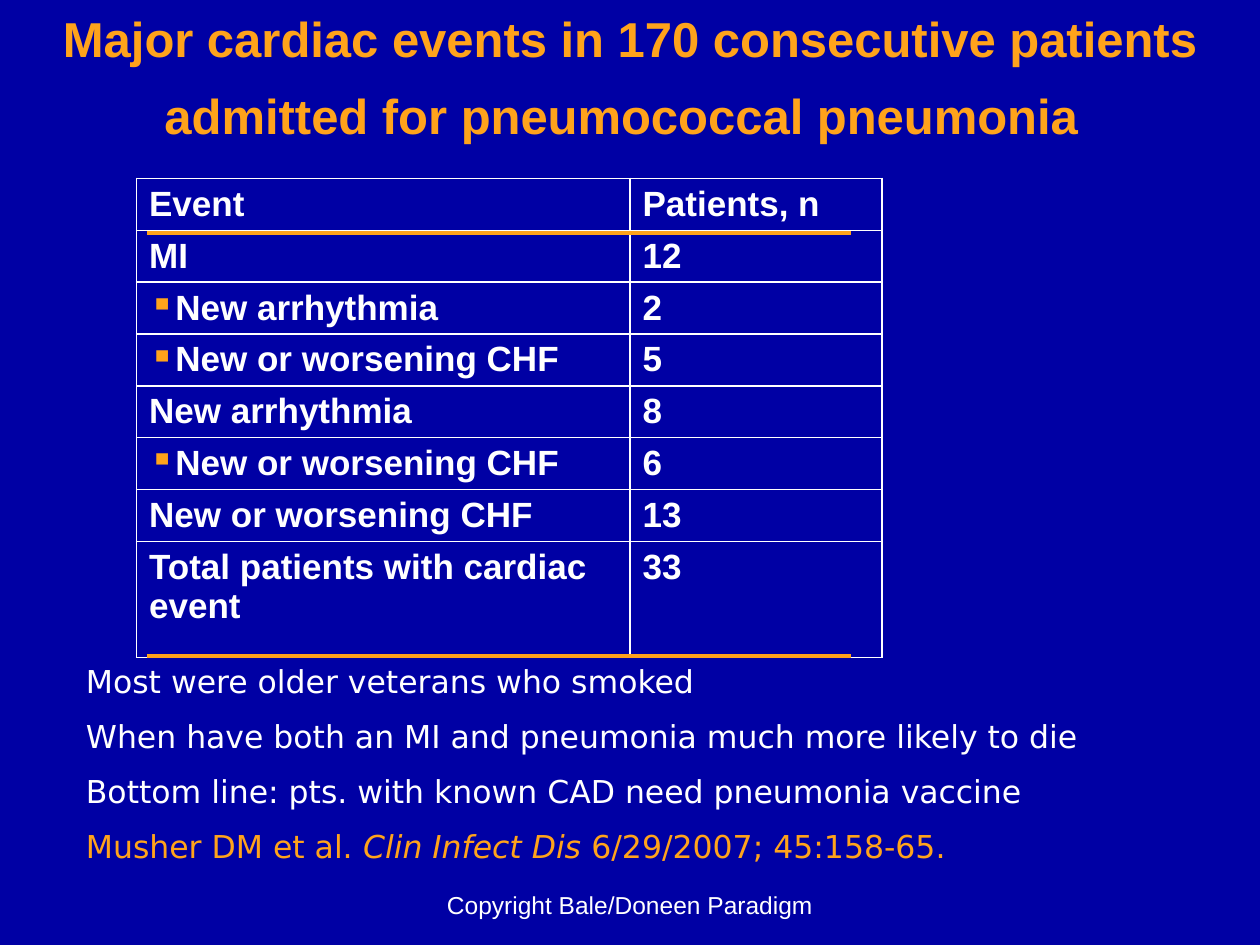
import pptx
import pptx.dml.color
import pptx.enum.shapes
import pptx.enum.text
import pptx.oxml.ns
import pptx.util
import lxml.etree

Pt = pptx.util.Pt
ALIGN = pptx.enum.text.PP_ALIGN
ANCHOR = pptx.enum.text.MSO_ANCHOR
COLORS = {"back": "0000A4", "text": "FFFFFF", "gold": "FFA31B"}

EVENTS = [
    ("Event", "Patients, n"),
    ("MI", "12"),
    ("▪New arrhythmia", "2"),
    ("▪New or worsening CHF", "5"),
    ("New arrhythmia", "8"),
    ("▪New or worsening CHF", "6"),
    ("New or worsening CHF", "13"),
    ("Total patients with cardiac event", "33"),
]
NOTES = [
    "Most were older veterans who smoked",
    "When have both an MI and pneumonia much more likely to die",
    "Bottom line: pts. with known CAD need pneumonia vaccine",
]


def color(name):
    return pptx.dml.color.RGBColor.from_string(COLORS[name])


def child(parent, tag, **attrs):
    return lxml.etree.SubElement(parent, pptx.oxml.ns.qn(tag), attrs)


class Deck:
    def __init__(self, slide):
        self.slide = slide
        fill = slide.background.fill
        fill.solid()
        fill.fore_color.rgb = color("back")

    def run(self, para, text, size, font="Arial", tint="text", bold=False, slant=False):
        run = para.add_run()
        run.text = text
        run.font.size = Pt(size)
        run.font.name = font
        run.font.bold = bold
        run.font.italic = slant
        run.font.color.rgb = color(tint)

    def box(self, left, top, width, height, anchor=ANCHOR.TOP):
        shape = self.slide.shapes.add_textbox(Pt(left), Pt(top), Pt(width), Pt(height))
        frame = shape.text_frame
        frame.word_wrap = True
        frame.vertical_anchor = anchor
        return frame

    def bullet(self, para, sign):
        """Put a gold bullet right before the text, with no indent."""
        props = para._p.get_or_add_pPr()
        props.set("marL", "0")
        props.set("indent", "0")
        child(child(props, "a:buClr"), "a:srgbClr", val=COLORS["gold"])
        child(props, "a:buChar", char=sign)

    def table(self, rows, left, top, widths, heights):
        frame = self.slide.shapes.add_table(
            len(rows), len(widths), Pt(left), Pt(top), Pt(sum(widths)), Pt(sum(heights)))
        table = frame.table
        table.first_row = table.horz_banding = False
        for col, width in zip(table.columns, widths):
            col.width = Pt(width)
        for row, height, texts in zip(table.rows, heights, rows):
            row.height = Pt(height)
            for cell, text in zip(row.cells, texts):
                cell.fill.background()
                cell.margin_top = Pt(3.6)
                cell.margin_bottom = Pt(2)
                para = cell.text_frame.paragraphs[0]
                if text.startswith("▪"):
                    self.bullet(para, "▪")
                self.run(para, text.lstrip("▪"), 20, bold=True)

    def rule(self, left, right, top):
        line = self.slide.shapes.add_connector(
            pptx.enum.shapes.MSO_CONNECTOR.STRAIGHT, Pt(left), Pt(top), Pt(right), Pt(top))
        line.line.color.rgb = color("gold")
        line.line.width = Pt(2.25)
        child(line._element.spPr, "a:effectLst")

    def title(self, text):
        para = self.box(0, 1.5, 720, 84, ANCHOR.MIDDLE).paragraphs[0]
        para.alignment = ALIGN.CENTER
        para.line_spacing = 1.05
        self.run(para, text, 28, tint="gold", bold=True)
        self.run(para, " ", 36, tint="gold", bold=True)

    def notes(self, texts, source):
        """Write the remarks, then the source as (text, slant) runs in gold."""
        frame = self.box(42, 375, 630, 127)
        lines = [[(text, "text", False)] for text in texts]
        lines.append([(text, "gold", slant) for text, slant in source])
        for i, line in enumerate(lines):
            para = frame.add_paragraph() if i else frame.paragraphs[0]
            if i:
                para.space_before = Pt(9.7)
            for text, tint, slant in line:
                self.run(para, text, 18, "DejaVu Sans", tint, slant=slant)

    def footer(self, text):
        para = self.box(246, 492, 228, 37, ANCHOR.BOTTOM).paragraphs[0]
        para.alignment = ALIGN.CENTER
        self.run(para, text, 14)


def main():
    show = pptx.Presentation()
    show.slide_width, show.slide_height = Pt(720), Pt(540)
    deck = Deck(show.slides.add_slide(show.slide_layouts[6]))
    deck.footer("Copyright Bale/Doneen Paradigm")
    deck.notes(NOTES, [("Musher DM et al. ", False), ("Clin Infect Dis", True),
                       (" 6/29/2007; 45:158-65.", False)])
    deck.title("Major cardiac events in 170 consecutive patients "
               "admitted for pneumococcal pneumonia")
    deck.table(EVENTS, 78, 102, [282, 144], [29.5] * 7 + [66.5])
    for top in (133, 375):
        deck.rule(84, 486, top)
    show.save("out.pptx")


if __name__ == "__main__":
    main()
